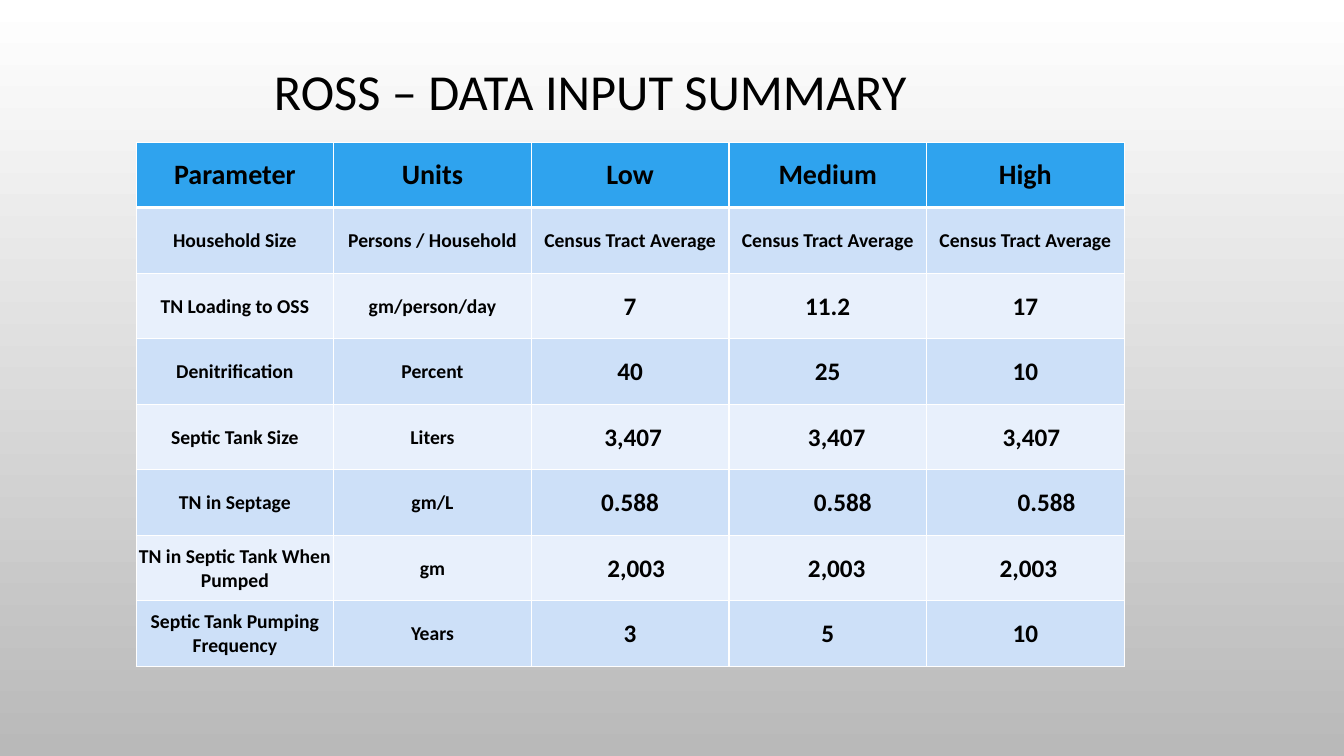
"""Build the data input summary slide with its parameter table."""

from dataclasses import dataclass

from pptx import Presentation
from pptx.dml.color import RGBColor
from pptx.enum.text import MSO_ANCHOR as Anchor, PP_ALIGN as Align
from pptx.oxml import parse_xml
from pptx.oxml.ns import nsdecls
from pptx.slide import Slide
from pptx.table import _Cell as Cell
from pptx.text.text import TextFrame
from pptx.util import Inches, Pt

BLACK = RGBColor(0x00, 0x00, 0x00)
WHITE = RGBColor(0xFF, 0xFF, 0xFF)
GREY = RGBColor(0xB9, 0xB9, 0xB9)
HEADER_BLUE = RGBColor(0x2F, 0xA3, 0xEE)
BAND_DARK = RGBColor(0xCD, 0xE0, 0xF8)
BAND_LIGHT = RGBColor(0xE8, 0xF0, 0xFC)

COLUMN_WIDTH = 1.96
ROW_HEIGHT = 0.65
CELL_MARGIN = 0.01
INDENT_STEP = 0.06
THIN_BORDER = 1
THICK_BORDER = 3


@dataclass(frozen=True)
class ParameterRow:
    name: str
    units: str
    estimates: tuple[str, str, str]
    size: int = 18
    indents: tuple[int, int, int] = (0, 0, 0)


HEADER = ("Parameter", "Units", "Low", "Medium", "High")
PARAMETERS = (
    ParameterRow("Household Size", "Persons / Household",
                 ("Census Tract Average",) * 3, size=14),
    ParameterRow("TN Loading to OSS", "gm/person/day", ("7", "11.2", "17")),
    ParameterRow("Denitrification", "Percent", ("40", "25", "10")),
    ParameterRow("Septic Tank Size", "Liters", ("3,407",) * 3, indents=(1, 3, 2)),
    ParameterRow("TN in Septage", "gm/L", ("0.588",) * 3, indents=(0, 5, 7)),
    ParameterRow("TN in Septic Tank When Pumped", "gm", ("2,003",) * 3,
                 indents=(2, 3, 1)),
    ParameterRow("Septic Tank Pumping Frequency", "Years", ("3", "5", "10")),
)


def write_text(frame: TextFrame, text: str, *, size: int, bold: bool = False,
               line_spacing: float = 1.0) -> None:
    frame.text = text
    paragraph = frame.paragraphs[0]
    paragraph.alignment = Align.CENTER
    paragraph.line_spacing = line_spacing
    font = paragraph.runs[0].font
    font.name = "Calibri"
    font.size = Pt(size)
    font.bold = bold
    font.color.rgb = BLACK


def set_borders(cell: Cell, *, top: int, bottom: int) -> None:
    widths = {"lnL": THIN_BORDER, "lnR": THIN_BORDER, "lnT": top, "lnB": bottom}
    properties = cell._tc.get_or_add_tcPr()
    for position, (tag, width) in enumerate(widths.items()):
        properties.insert(position, parse_xml(
            f'<a:{tag} {nsdecls("a")} w="{Pt(width)}"><a:solidFill>'
            f'<a:srgbClr val="{WHITE}"/></a:solidFill></a:{tag}>'))


def format_cell(cell: Cell, text: str, *, size: int, fill: RGBColor,
                indent: int = 0, top: int = THIN_BORDER,
                bottom: int = THIN_BORDER) -> None:
    write_text(cell.text_frame, text, size=size, bold=True)
    cell.vertical_anchor = Anchor.MIDDLE
    cell.margin_left = Inches(CELL_MARGIN + indent * INDENT_STEP)
    cell.margin_right = cell.margin_top = Inches(CELL_MARGIN)
    cell.margin_bottom = 0
    cell.fill.solid()
    cell.fill.fore_color.rgb = fill
    set_borders(cell, top=top, bottom=bottom)


def add_background(slide: Slide) -> None:
    fill = slide.background.fill
    fill.gradient()
    fill.gradient_angle = 270
    for stop, color in zip(fill.gradient_stops, (WHITE, GREY)):
        stop.color.rgb = color


def add_title(slide: Slide) -> None:
    title = slide.shapes.title
    title.left, title.top = Inches(0.71), Inches(0.51)
    title.width, title.height = Inches(10.29), Inches(0.85)
    title.text_frame.vertical_anchor = Anchor.MIDDLE
    write_text(title.text_frame, "ROSS – DATA INPUT SUMMARY", size=36,
               line_spacing=0.9)


def add_parameter_table(slide: Slide) -> None:
    row_count, column_count = len(PARAMETERS) + 1, len(HEADER)
    table = slide.shapes.add_table(
        row_count, column_count, Inches(1.35), Inches(1.41),
        Inches(COLUMN_WIDTH * column_count), Inches(ROW_HEIGHT * row_count)).table
    table.first_row = table.horz_banding = False
    for column, heading in enumerate(HEADER):
        format_cell(table.cell(0, column), heading, size=20, fill=HEADER_BLUE,
                    bottom=THICK_BORDER)
    for row, parameter in enumerate(PARAMETERS, start=1):
        texts = (parameter.name, parameter.units, *parameter.estimates)
        sizes = (14, 14) + (parameter.size,) * 3
        indents = (0, 0) + parameter.indents
        for column, (text, size, indent) in enumerate(zip(texts, sizes, indents)):
            format_cell(table.cell(row, column), text, size=size, indent=indent,
                        fill=BAND_DARK if row % 2 else BAND_LIGHT,
                        top=THICK_BORDER if row == 1 else THIN_BORDER)


def main() -> None:
    presentation = Presentation()
    presentation.slide_width = Inches(13.33)
    presentation.slide_height = Inches(7.5)
    slide = presentation.slides.add_slide(presentation.slide_layouts[5])
    add_background(slide)
    add_title(slide)
    add_parameter_table(slide)
    presentation.save("out.pptx")


if __name__ == "__main__":
    main()
